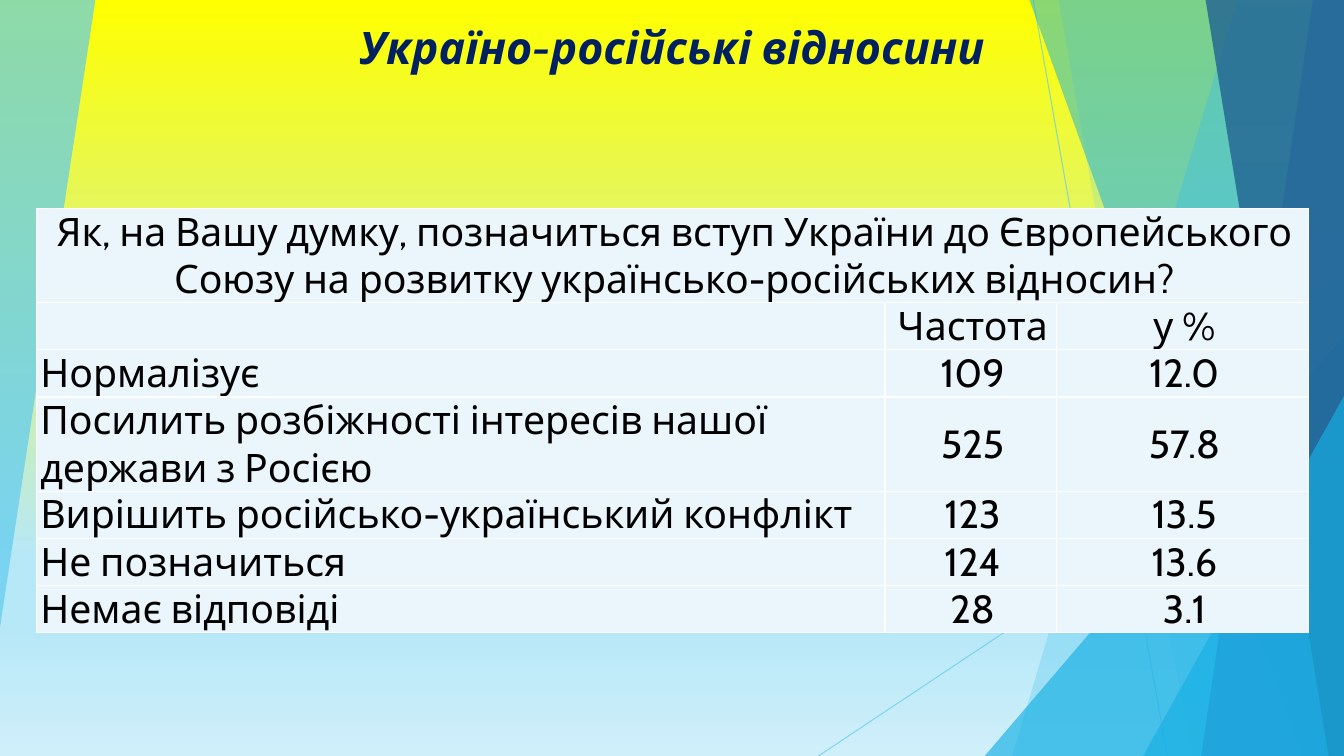
from dataclasses import dataclass

from lxml import etree
from pptx import Presentation
from pptx import util as u
from pptx.dml.color import RGBColor
from pptx.enum import shapes, text
from pptx.oxml.ns import qn

WIDTH, HEIGHT = 960, 540
TOP = -0.72
FONT = "Cabin"
COLORS = {
    "sky": "5FCBEF", "azure": "17B0E4", "blue": "2E83C3", "navy": "226292",
    "title": "002060", "ink": "000000", "cell": "EAF6FC", "border": "FFFFFF",
}
BACKGROUND_STOPS = [(0, "FFFF00"), (74, "B7E8F8"), (83, "B7E8F8"), (100, "CFEFFA")]


@dataclass
class Panel:
    points: list
    color: str
    opacity: int


@dataclass
class Ray:
    start: tuple
    end: tuple


@dataclass
class Wedge:
    left: float
    top: float


def right_panel(top_x: float, bottom_x: float, color: str, opacity: int) -> Panel:
    """A panel that reaches from a slanted left edge to the slide's right side."""
    points = [(top_x, TOP), (WIDTH, TOP), (WIDTH, HEIGHT), (bottom_x, HEIGHT)]
    return Panel(points, color, opacity)


DECORATION = [
    Panel([(0, TOP), (67.7, TOP), (67.7, 0.7), (0, 447.8)], "sky", 70),
    Ray((738, 0), (833.8, HEIGHT)),
    Ray((WIDTH, 290.2), (584.6, HEIGHT)),
    right_panel(884.2, 722.9, "sky", 36),
    right_panel(756, 851, "sky", 20),
    Wedge(703.4, 239.8),
    right_panel(735.1, 929.5, "azure", 50),
    right_panel(938.2, 858.2, "blue", 70),
    right_panel(861.1, 949, "navy", 80),
    Wedge(816.5, 283),
]

QUESTION = ("Як, на Вашу думку, позначиться вступ України до Європейського Союзу "
            "на розвитку українсько-російських відносин?")
ROWS = [
    (QUESTION, "", ""),
    ("", "Частота", "у %"),
    ("Нормалізує", "109", "12.0"),
    ("Посилить розбіжності інтересів нашої держави з Росією", "525", "57.8"),
    ("Вирішить російсько-український конфлікт", "123", "13.5"),
    ("Не позначиться", "124", "13.6"),
    ("Немає відповіді", "28", "3.1"),
]
COLUMN_WIDTHS = [606.2, 122.4, 180]
LINE_HEIGHT = 33.6
ROW_LINES = [2, 1, 1, 2, 1, 1, 1]


def rgb(name: str) -> RGBColor:
    return RGBColor.from_string(COLORS[name])


def set_opacity(properties, percent: int) -> None:
    color = properties.find(".//" + qn("a:srgbClr"))
    etree.SubElement(color, qn("a:alpha"), val=str(percent * 1000))


def paint(shape, color: str, opacity: int) -> None:
    shape.shadow.inherit = False
    shape.fill.solid()
    shape.fill.fore_color.rgb = rgb(color)
    set_opacity(shape.fill._xPr, opacity)
    shape.line.fill.background()


def draw_panel(slide, panel: Panel) -> None:
    builder = slide.shapes.build_freeform(*panel.points[0], scale=u.Pt(1))
    builder.add_line_segments(panel.points[1:], close=True)
    paint(builder.convert_to_shape(), panel.color, panel.opacity)


def draw_ray(slide, ray: Ray) -> None:
    ends = [u.Pt(value) for value in ray.start + ray.end]
    connector = slide.shapes.add_connector(shapes.MSO_CONNECTOR.STRAIGHT, *ends)
    connector.line.color.rgb = rgb("sky")
    connector.line.width = u.Pt(0.75)
    set_opacity(connector.line._ln, 70)
    etree.SubElement(connector._element.spPr, qn("a:effectLst"))


def draw_wedge(slide, wedge: Wedge) -> None:
    shape = slide.shapes.add_shape(
        shapes.MSO_SHAPE.ISOSCELES_TRIANGLE, u.Pt(wedge.left), u.Pt(wedge.top),
        u.Pt(WIDTH - wedge.left), u.Pt(HEIGHT - wedge.top))
    shape.adjustments[0] = 1
    paint(shape, "azure", 66)


def draw_background(slide) -> None:
    fill = slide.background.fill
    fill.gradient()
    fill.gradient_angle = 270
    stops = slide.element.find(".//" + qn("a:gsLst"))
    for stop in list(stops):
        stops.remove(stop)
    for position, color in BACKGROUND_STOPS:
        stop = etree.SubElement(stops, qn("a:gs"), pos=str(position * 1000))
        etree.SubElement(stop, qn("a:srgbClr"), val=color)


def draw_title(slide) -> None:
    box = slide.shapes.add_textbox(0, u.Pt(10.8), u.Pt(WIDTH), u.Pt(46))
    frame = box.text_frame
    frame.word_wrap = True
    frame.auto_size = text.MSO_AUTO_SIZE.SHAPE_TO_FIT_TEXT
    paragraph = frame.paragraphs[0]
    paragraph.text = "Україно-російські відносини"
    paragraph.alignment = text.PP_ALIGN.CENTER
    font = paragraph.font
    font.name, font.size, font.bold, font.italic = FONT, u.Pt(32), True, True
    font.color.rgb = rgb("title")


def style_cell(cell, content: str, centered: bool) -> None:
    cell.margin_left = cell.margin_right = cell.margin_top = cell.margin_bottom = 0
    cell.vertical_anchor = text.MSO_ANCHOR.MIDDLE
    properties = cell._tc.get_or_add_tcPr()
    for side in ("a:lnL", "a:lnR", "a:lnT", "a:lnB"):
        border = etree.SubElement(properties, qn(side), w=str(u.Pt(1)))
        solid = etree.SubElement(border, qn("a:solidFill"))
        etree.SubElement(solid, qn("a:srgbClr"), val=COLORS["border"])
    cell.fill.solid()
    cell.fill.fore_color.rgb = rgb("cell")

    paragraph = cell.text_frame.paragraphs[0]
    paragraph.text = content
    paragraph.alignment = text.PP_ALIGN.CENTER if centered else text.PP_ALIGN.LEFT
    paragraph._p.get_or_add_pPr().set("marL", str(u.Pt(2.9)))
    font = paragraph.font
    font.name, font.size = FONT, u.Pt(28)
    font.color.rgb = rgb("ink")


def draw_table(slide) -> None:
    table = slide.shapes.add_table(
        len(ROWS), len(COLUMN_WIDTHS), u.Pt(25.9), u.Pt(149),
        u.Pt(sum(COLUMN_WIDTHS)), u.Pt(LINE_HEIGHT * sum(ROW_LINES))).table
    table.first_row = table.horz_banding = False
    for column, width in zip(table.columns, COLUMN_WIDTHS):
        column.width = u.Pt(width)
    for row_index, (row, lines) in enumerate(zip(ROWS, ROW_LINES)):
        table.rows[row_index].height = u.Pt(LINE_HEIGHT * lines)
        for column_index, content in enumerate(row):
            centered = row_index == 0 or column_index > 0
            style_cell(table.cell(row_index, column_index), content, centered)
    question = table.cell(0, 0)
    question.vertical_anchor = text.MSO_ANCHOR.TOP
    question.merge(table.cell(0, 2))


def main() -> None:
    presentation = Presentation()
    presentation.slide_width, presentation.slide_height = u.Pt(WIDTH), u.Pt(HEIGHT)
    slide = presentation.slides.add_slide(presentation.slide_layouts[6])

    # Background and decoration
    draw_background(slide)
    draw = {Panel: draw_panel, Ray: draw_ray, Wedge: draw_wedge}
    for part in DECORATION:
        draw[type(part)](slide, part)

    # Content
    draw_title(slide)
    draw_table(slide)
    presentation.save("out.pptx")


if __name__ == "__main__":
    main()
